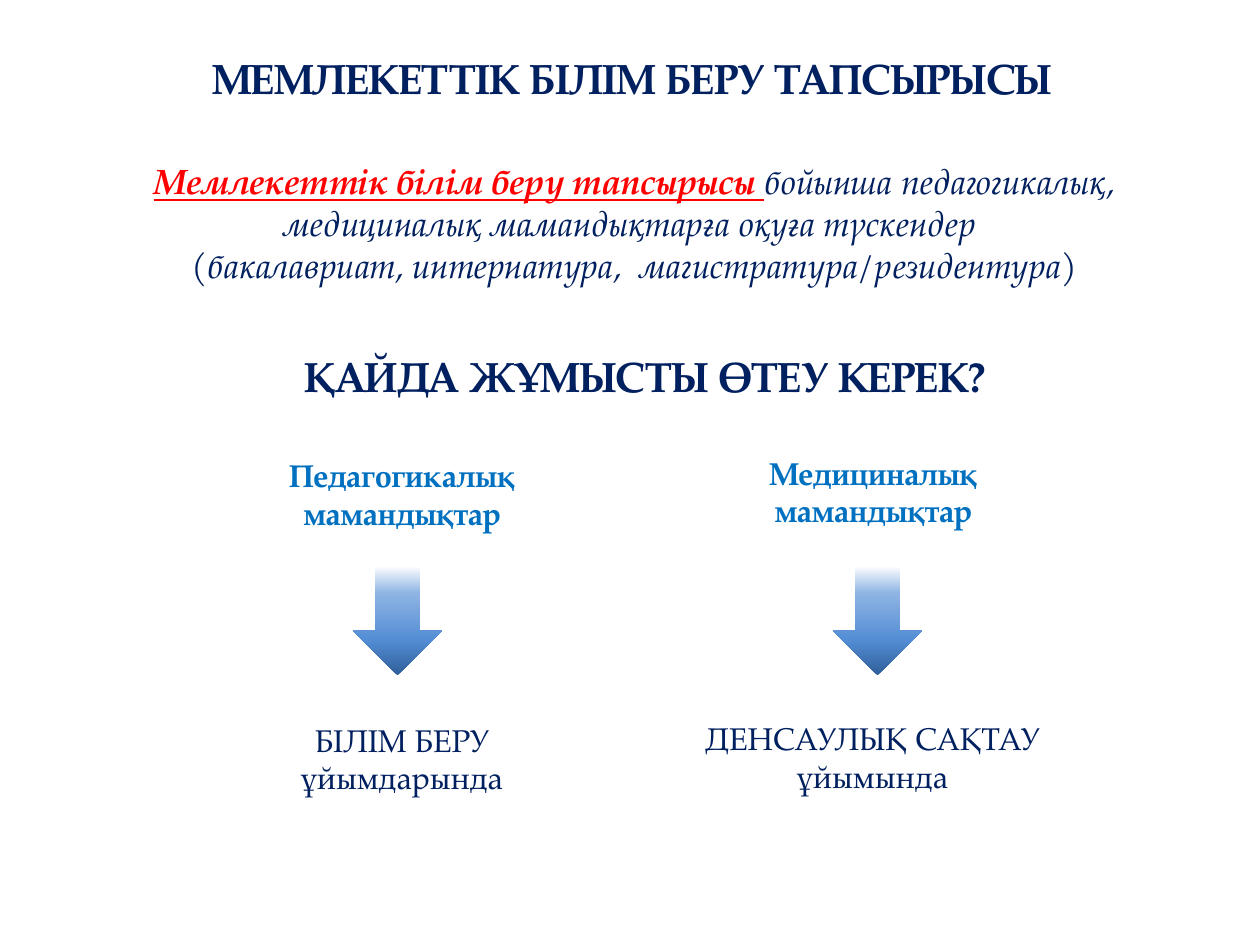
import copy

import pptx
import pptx.dml.color
import pptx.enum.shapes
import pptx.enum.text
import pptx.util
from pptx.util import Inches

FONT = "TeX Gyre Pagella"
NAVY, BLUE, RED = "002060", "0070C0", "FF0000"
ARROW_STOPS = [(0, "2F5F99"), (0.33, "558ED5"), (0.75, "8EB4E3"), (1, "FFFFFF")]


def rgb(value):
    return pptx.dml.color.RGBColor.from_string(value)


def style_run(r, size, color, bold=False, italic=False, underline=False):
    r.font.name = FONT
    r.font.size = pptx.util.Pt(size)
    r.font.color.rgb = rgb(color)
    r.font.bold = bold
    r.font.italic = italic
    r.font.underline = underline


def add_text(s, box, text, size, color, bold=False, wrap=True):
    """Add a text box; wrapped text is centred. Return its paragraph."""
    tf = s.shapes.add_textbox(*(Inches(v) for v in box)).text_frame
    tf.word_wrap = wrap
    tf.auto_size = pptx.enum.text.MSO_AUTO_SIZE.SHAPE_TO_FIT_TEXT
    p = tf.paragraphs[0]
    p.text = text
    if wrap:
        p.alignment = pptx.enum.text.PP_ALIGN.CENTER
    for r in p.runs:
        style_run(r, size, color, bold)
    return p


def add_down_arrow(s, left, top):
    sp = s.shapes.add_shape(pptx.enum.shapes.MSO_SHAPE.DOWN_ARROW,
                            Inches(left), Inches(top), Inches(0.71), Inches(0.87))
    sp.shadow.inherit = False
    sp.line.fill.background()
    sp.fill.gradient()
    sp.fill.gradient_angle = 90
    # A new gradient has two stops: extend the list to the number needed
    stops = sp.fill._fill._gradFill.gsLst
    while len(stops) < len(ARROW_STOPS):
        stops.append(copy.deepcopy(stops[0]))
    for stop, (position, color) in zip(sp.fill.gradient_stops, ARROW_STOPS):
        stop.position = position
        stop.color.rgb = rgb(color)


def add_definition(s):
    p = add_text(s, (0.35, 1.22, 9.37, 1.11), "", 20, NAVY)
    r = p.add_run()
    r.text = "Мемлекеттік білім беру тапсырысы "
    style_run(r, 20, RED, bold=True, italic=True, underline=True)
    r = p.add_run()
    r.text = "бойынша педагогикалық, медициналық мамандықтарға оқуға түскендер "
    style_run(r, 20, NAVY, italic=True)
    p.add_line_break()
    r = p.add_run()
    r.text = "(бакалавриат, интернатура,  магистратура/резидентура)"
    style_run(r, 20, NAVY, italic=True)


def main():
    prs = pptx.Presentation()
    prs.slide_width, prs.slide_height = Inches(10), Inches(7.5)
    s = prs.slides.add_slide(prs.slide_layouts[6])

    # Title, definition and question
    add_text(s, (0.92, 0.37, 8.19, 0.5), " МЕМЛЕКЕТТІК БІЛІМ БЕРУ ТАПСЫРЫСЫ ",
             24, NAVY, bold=True)
    add_definition(s)
    add_text(s, (2.32, 2.73, 6.29, 0.5), "ҚАЙДА ЖҰМЫСТЫ ӨТЕУ КЕРЕК?",
             24, NAVY, bold=True, wrap=False)

    # Each column: specialities, arrow, place of work
    columns = [
        ((1.93, 3.57, 2.52, 0.71), "Педагогикалық мамандықтар", 2.8,
         (1.93, 5.67, 2.52, 0.71), "БІЛІМ БЕРУ ұйымдарында"),
        ((5.67, 3.55, 2.52, 0.71), "Медициналық мамандықтар", 6.61,
         (5.47, 5.66, 2.91, 0.71), "ДЕНСАУЛЫҚ САҚТАУ ұйымында"),
    ]
    for field_box, field, arrow_left, place_box, place in columns:
        add_text(s, field_box, field, 18, BLUE, bold=True)
        add_down_arrow(s, arrow_left, 4.49)
        add_text(s, place_box, place, 18, NAVY)

    prs.save("out.pptx")


if __name__ == "__main__":
    main()
